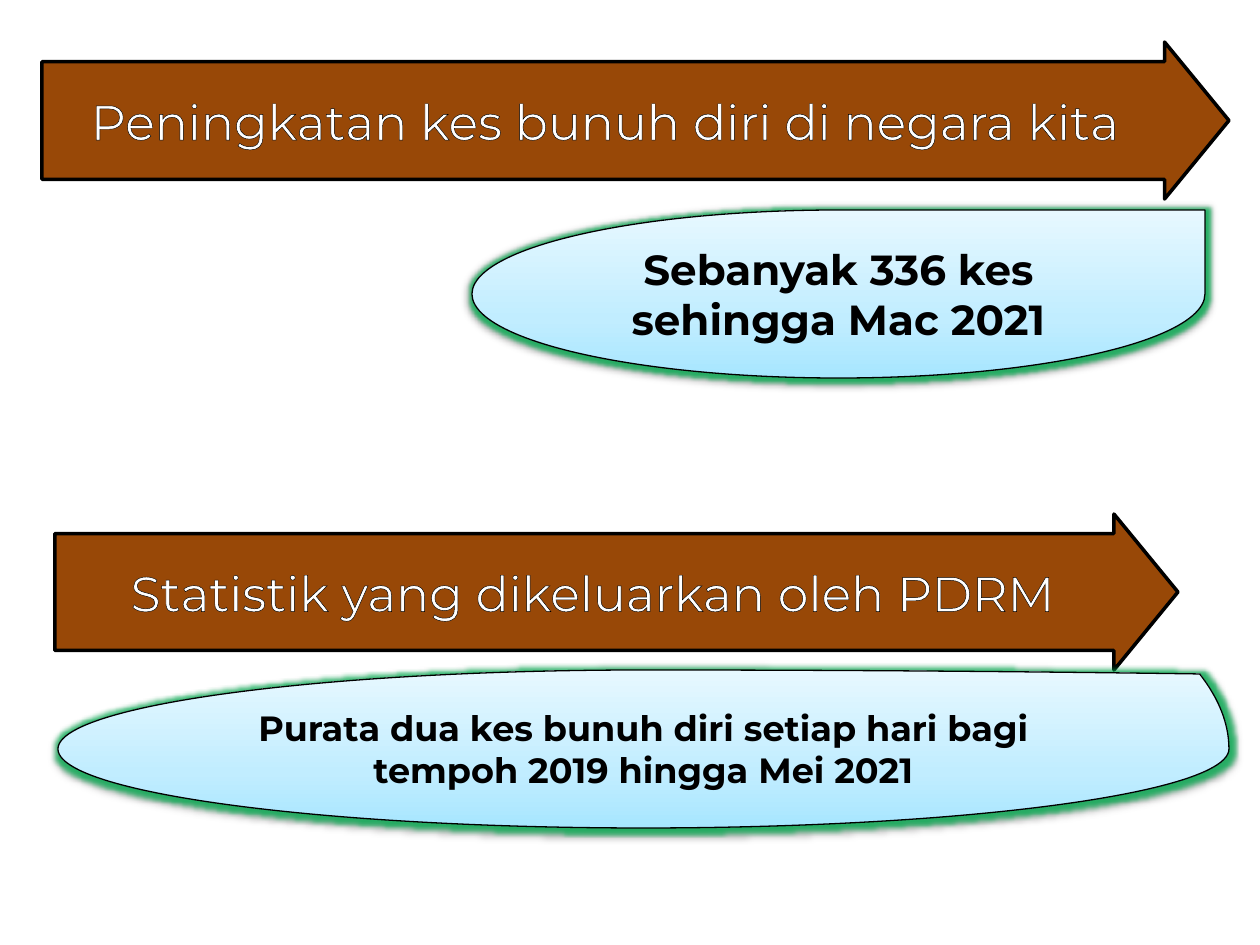
"""Build a slide of two arrow headings, each with a glowing teardrop statement."""
from dataclasses import dataclass

from lxml.etree import SubElement, fromstring
from pptx import Presentation
from pptx.dml.color import RGBColor
from pptx.enum.shapes import MSO_SHAPE
from pptx.enum.text import MSO_ANCHOR, PP_ALIGN
from pptx.oxml.ns import qn
from pptx.shapes.autoshape import Shape
from pptx.slide import Slide
from pptx.util import Emu, Pt

PIXELS_PER_INCH = 126
FONT = "Montserrat"
COLORS = {
    "arrow": "984807",
    "black": "000000",
    "white": "FFFFFF",
    "glow": "00B050",
    "deep": "A7E6FF",
    "middle": "C1EDFF",
    "pale": "E7F8FF",
}
GRADIENT = {0: "deep", 35: "middle", 100: "pale"}
NAMESPACE = 'xmlns:a="http://schemas.openxmlformats.org/drawingml/2006/main"'


@dataclass(frozen=True)
class Box:
    left: int
    top: int
    width: int
    height: int


@dataclass(frozen=True)
class Statement:
    heading: str
    arrow: Box
    detail: str
    teardrop: Box
    point: float
    detail_size: int


STATEMENTS = [
    Statement("Peningkatan kes bunuh diri di negara kita ", Box(42, 42, 1187, 157),
              "Sebanyak 336 kes sehingga Mac 2021", Box(472, 210, 733, 168), 1, 24),
    Statement("Statistik yang dikeluarkan oleh PDRM", Box(55, 514, 1123, 156),
              "Purata dua kes bunuh diri setiap hari bagi tempoh 2019 hingga Mei 2021",
              Box(58, 670, 1171, 158), 0.95, 20),
]


def px(value: int) -> Emu:
    """Convert pixels to EMU."""
    return Emu(round(value * 914400 / PIXELS_PER_INCH))


def color(name: str) -> RGBColor:
    """Look up a named colour."""
    return RGBColor.from_string(COLORS[name])


def shadow_xml(blur: float, distance: float, opacity: int) -> str:
    """Describe a black shadow falling downwards."""
    return (f'<a:outerShdw {NAMESPACE} blurRad="{Pt(blur)}" dist="{Pt(distance)}" '
            f'dir="5400000" rotWithShape="0"><a:srgbClr val="{COLORS["black"]}">'
            f'<a:alpha val="{opacity * 1000}"/></a:srgbClr></a:outerShdw>')


def add_shape(slide: Slide, kind: MSO_SHAPE, box: Box, line_width: float) -> Shape:
    """Add a black-outlined shape without the default shadow."""
    shape = slide.shapes.add_shape(
        kind, px(box.left), px(box.top), px(box.width), px(box.height))
    shape.shadow.inherit = False
    shape.line.color.rgb = color("black")
    shape.line.width = Pt(line_width)
    return shape


def write_text(shape: Shape, text: str, *, size: int, fill: str,
               bold: bool = False, outlined: bool = False) -> None:
    """Write centred text into a shape."""
    frame = shape.text_frame
    frame.word_wrap = True
    frame.vertical_anchor = MSO_ANCHOR.MIDDLE
    paragraph = frame.paragraphs[0]
    paragraph.alignment = PP_ALIGN.CENTER
    run = paragraph.add_run()
    run.text = text
    run.font.size = Pt(size)
    run.font.bold = bold
    run.font.name = FONT
    run.font.color.rgb = color(fill)
    if outlined:
        properties = run.font._element
        properties.insert(0, fromstring(
            f'<a:ln {NAMESPACE} w="{Pt(0.75)}"><a:solidFill>'
            f'<a:srgbClr val="{COLORS["black"]}"/></a:solidFill></a:ln>'))
        properties.insert(2, fromstring(
            f'<a:effectLst {NAMESPACE}>{shadow_xml(4, 2, 60)}</a:effectLst>'))


def add_arrow(slide: Slide, statement: Statement) -> None:
    """Draw the heading arrow."""
    arrow = add_shape(slide, MSO_SHAPE.RIGHT_ARROW, statement.arrow, 2)
    arrow.adjustments[0] = 0.75
    arrow.adjustments[1] = 0.41
    arrow.fill.solid()
    arrow.fill.fore_color.rgb = color("arrow")
    write_text(arrow, statement.heading, size=28, fill="white", outlined=True)


def add_teardrop(slide: Slide, statement: Statement) -> None:
    """Draw the gradient teardrop with its glow and shadow."""
    teardrop = add_shape(slide, MSO_SHAPE.TEAR, statement.teardrop, 0.75)
    teardrop.adjustments[0] = statement.point
    teardrop.fill.gradient()
    teardrop.fill.gradient_angle = 90
    properties = teardrop._element.spPr
    stops = properties.find(f"{qn('a:gradFill')}/{qn('a:gsLst')}")
    for stop in list(stops):
        stops.remove(stop)
    for position, name in GRADIENT.items():
        stop = SubElement(stops, qn("a:gs"), pos=str(position * 1000))
        SubElement(stop, qn("a:srgbClr"), val=COLORS[name])
    effects = properties.find(qn("a:effectLst"))
    effects.append(fromstring(
        f'<a:glow {NAMESPACE} rad="{Pt(5)}"><a:srgbClr val="{COLORS["glow"]}">'
        f'<a:alpha val="75000"/></a:srgbClr></a:glow>'))
    effects.append(fromstring(shadow_xml(3.1, 1.6, 38)))
    write_text(teardrop, statement.detail, size=statement.detail_size,
               fill="black", bold=True)


def main() -> None:
    """Build and save the presentation."""
    presentation = Presentation()
    presentation.slide_width = px(1260)
    presentation.slide_height = px(945)
    slide = presentation.slides.add_slide(presentation.slide_layouts[6])
    for statement in STATEMENTS:
        add_arrow(slide, statement)
        add_teardrop(slide, statement)
    presentation.save("out.pptx")


if __name__ == "__main__":
    main()
